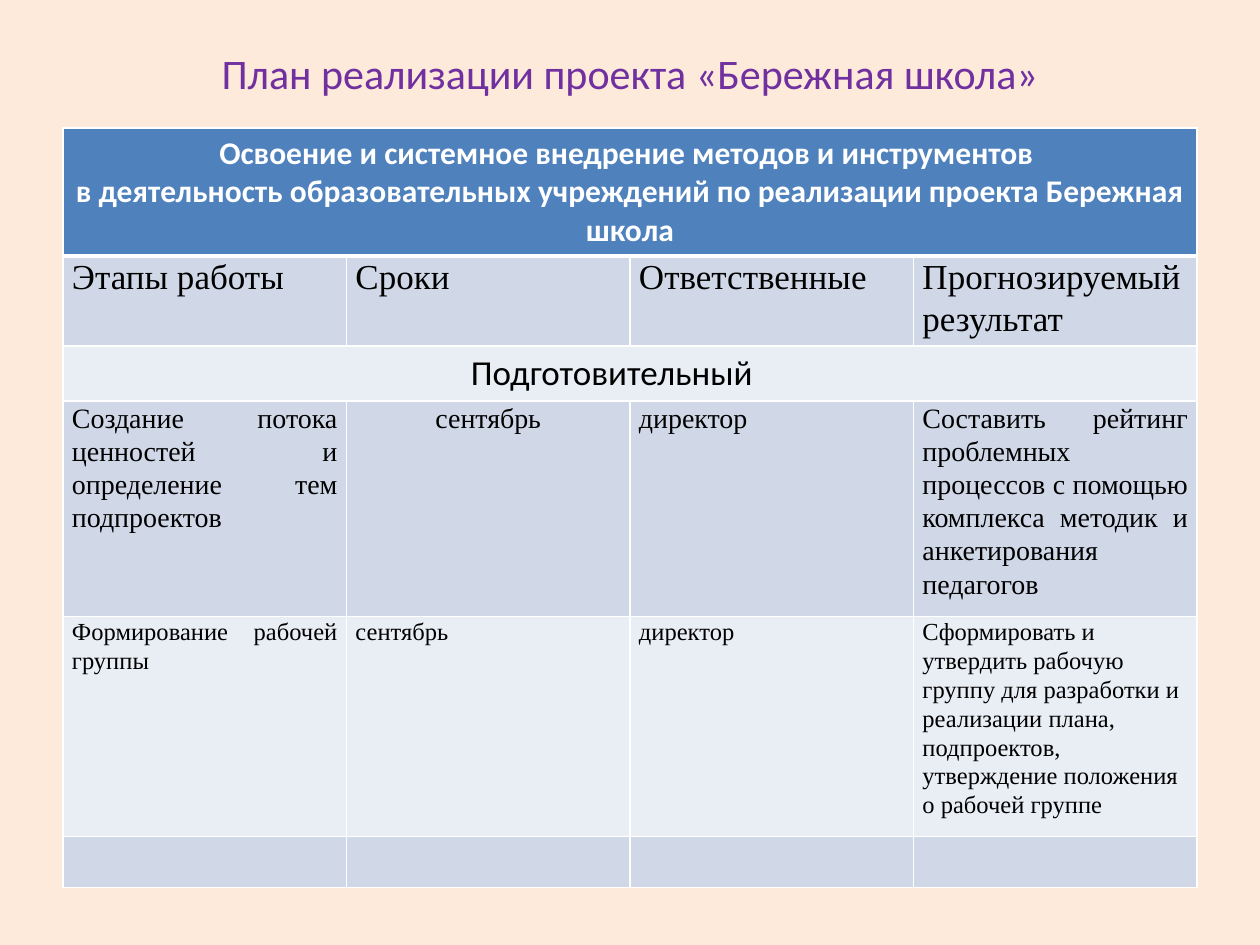
"""Build the project plan slide with its table of stages."""
from lxml import etree
from pptx import Presentation
from pptx import util as u
from pptx.dml.color import RGBColor
from pptx.enum import text
from pptx.oxml.ns import qn

PX = 914400 / 126
COLORS = {"bg": "FDEADA", "title": "7030A0", "head": "4F81BD", "band": "D0D8E8",
          "light": "E9EDF4", "white": "FFFFFF", "black": "000000"}
SANS, SERIF = "Calibri", "Times New Roman"
LEFT, CENTER, JUSTIFY = text.PP_ALIGN.LEFT, text.PP_ALIGN.CENTER, text.PP_ALIGN.JUSTIFY

TITLE = "План реализации проекта «Бережная школа»"
TITLE_BOX = (63, 37, 1134, 71)
TABLE_LEFT, TABLE_TOP, COL_WIDTH, COLS = 63, 128, 283.5, 4
HEADING = ("Освоение и системное внедрение методов и инструментов \n"
           "в деятельность образовательных учреждений по реализации проекта Бережная школа")
ROWS = [
    dict(height=128, fill="head", size=18, font=SANS, color="white", bold=True,
         cells=[(HEADING, CENTER)]),
    dict(height=83, fill="band", size=20, font=SERIF,
         cells=[("Этапы работы", JUSTIFY), ("Сроки", LEFT), ("Ответственные", LEFT),
                ("Прогнозируемый результат", LEFT)]),
    dict(height=55, fill="light", size=20, font=SANS, margin_right=49,
         cells=[("Подготовительный", CENTER)]),
    dict(height=200, fill="band", size=16, font=SERIF,
         cells=[("Создание потока ценностей и определение тем подпроектов", JUSTIFY),
                ("сентябрь", CENTER), ("директор", JUSTIFY),
                ("Составить рейтинг проблемных процессов с помощью комплекса методик "
                 "и анкетирования педагогов", JUSTIFY)]),
    dict(height=203, fill="light", size=14, font=SERIF,
         cells=[("Формирование рабочей группы", JUSTIFY), ("сентябрь", LEFT),
                ("директор", LEFT),
                ("Сформировать и утвердить рабочую группу для разработки и реализации "
                 "плана, подпроектов, утверждение положения о рабочей группе", LEFT)]),
    dict(height=51, fill="band", cells=[]),
]


def px(n):
    return u.Emu(round(n * PX))


def rgb(name):
    return RGBColor.from_string(COLORS[name])


def write(tf, content, align, size, font, color="black", bold=False, spacing=None):
    tf.text = content
    for p in tf.paragraphs:
        p.alignment = align
        p.line_spacing = spacing
        for r in p.runs:
            r.font.size, r.font.name, r.font.bold = u.Pt(size), font, bold
            r.font.color.rgb = rgb(color)


def add_borders(cell, widths):
    tcPr = cell._tc.get_or_add_tcPr()
    for side, width in widths.items():
        ln = etree.SubElement(tcPr, qn(f"a:ln{side}"), w=str(u.Pt(width)))
        fill = etree.SubElement(ln, qn("a:solidFill"))
        etree.SubElement(fill, qn("a:srgbClr"), val=COLORS["white"])


def add_title(s):
    tf = s.shapes.add_textbox(*map(px, TITLE_BOX)).text_frame
    tf.word_wrap = True
    tf.vertical_anchor = text.MSO_ANCHOR.MIDDLE
    write(tf, TITLE, CENTER, 24, SANS, "title")


def fill_row(table, i, row):
    table.rows[i].height = px(row["height"])
    cells = row["cells"]
    borders = {"L": 1, "R": 1, "T": 1, "B": 3 if i == 0 else 1}
    if i == 1:
        del borders["T"]
    for j in range(COLS):
        cell = table.cell(i, j)
        add_borders(cell, borders)
        cell.fill.solid()
        cell.fill.fore_color.rgb = rgb(row["fill"])
    if len(cells) == 1:
        table.cell(i, 0).merge(table.cell(i, COLS - 1))
    for j, (content, align) in enumerate(cells):
        cell = table.cell(i, j)
        tight = len(cells) == COLS
        if tight:
            cell.margin_left = cell.margin_right = px(9)
            cell.margin_top = cell.margin_bottom = 0
        elif "margin_right" in row:
            cell.margin_right = px(row["margin_right"])
        write(cell.text_frame, content, align, row["size"], row["font"],
              row.get("color", "black"), row.get("bold", False), 1.07 if tight else None)


def add_plan(s):
    height = sum(row["height"] for row in ROWS)
    table = s.shapes.add_table(len(ROWS), COLS, px(TABLE_LEFT), px(TABLE_TOP),
                               px(COL_WIDTH * COLS), px(height)).table
    for col in table.columns:
        col.width = px(COL_WIDTH)
    for i, row in enumerate(ROWS):
        fill_row(table, i, row)


def main():
    prs = Presentation()
    prs.slide_width, prs.slide_height = px(1260), px(945)
    s = prs.slides.add_slide(prs.slide_layouts[6])
    s.background.fill.solid()
    s.background.fill.fore_color.rgb = rgb("bg")
    add_title(s)
    add_plan(s)
    prs.save("out.pptx")


if __name__ == "__main__":
    main()
